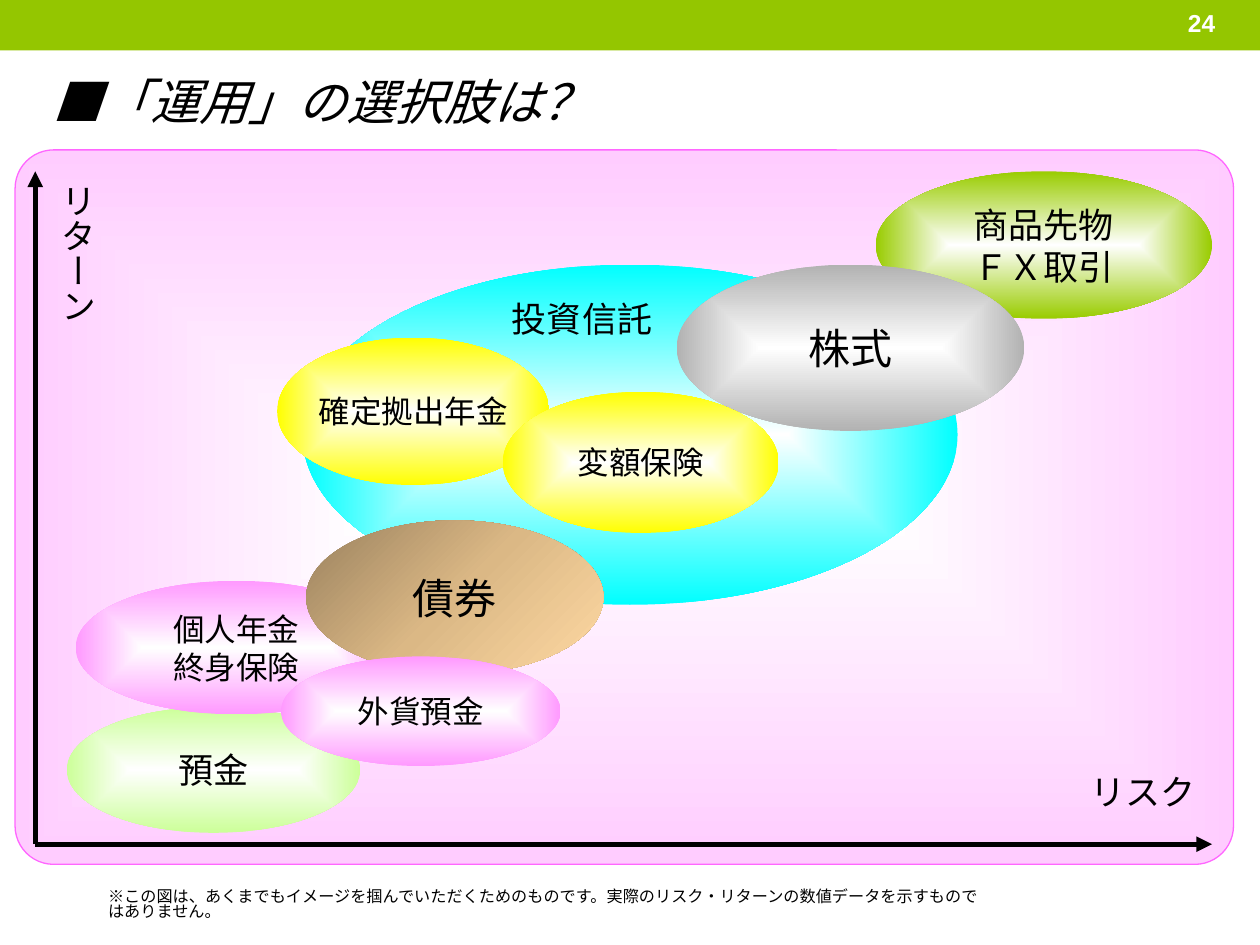
from lxml import etree
from pptx import Presentation
from pptx import util as u
from pptx.dml.color import RGBColor
from pptx.enum import shapes, text
from pptx.oxml.ns import qn

WIDE, HIGH = 10, 7.5
SANS, CJK = "Arial", "Noto Sans CJK JP"
BLACK = RGBColor(0, 0, 0)
WHITE = RGBColor(0xFF, 0xFF, 0xFF)
GREEN = RGBColor(0x94, 0xC6, 0x00)
PANEL = RGBColor(0xFF, 0xCC, 0xFF)
EDGE = RGBColor(0xFF, 0x66, 0xFF)
MINT = RGBColor(0xCC, 0xFF, 0x99)
LIME = RGBColor(0x99, 0xCC, 0x00)
CYAN = RGBColor(0x00, 0xFF, 0xFF)
GREY = RGBColor(0xB2, 0xB2, 0xB2)
YELLOW = RGBColor(0xFF, 0xFF, 0x00)
PINK = RGBColor(0xFF, 0x99, 0xFF)
TAN = (RGBColor(0x9A, 0x81, 0x5E), RGBColor(0xDB, 0xB8, 0x85),
       RGBColor(0xFF, 0xD9, 0xA3))

# Axis corner and ends, shared by both arrows
LEFT, BASE, TOP, RIGHT = 0.28, 6.7, 1.36, 9.62

# Investment kinds from back to front: box, colour, lines, text size
KINDS = [
    ((0.53, 5.61, 2.33, 1.0), MINT, ["預金"], 20),
    ((6.95, 1.36, 2.67, 1.17), LIME, ["商品先物", "ＦＸ取引"], 20),
    ((2.4, 2.1, 5.2, 2.7), CYAN, [], 20),
    ((5.37, 2.1, 2.76, 1.32), GREY, ["株式"], 24),
    ((2.2, 2.68, 2.16, 1.17), YELLOW, ["確定拠出年金"], 18),
    ((0.6, 4.61, 2.55, 1.06), PINK, ["個人年金", "終身保険"], 18),
    ((3.99, 3.11, 2.19, 1.12), YELLOW, ["変額保険"], 18),
    ((2.43, 4.13, 2.36, 1.22), TAN, ["債券"], 24),
    ((2.23, 5.21, 2.22, 0.87), PINK, ["外貨預金"], 18),
]


def place(box):
    return [u.Inches(n) for n in box]


def write(frame, lines, size, font=CJK, color=BLACK, bold=False,
          slant=False, align=text.PP_ALIGN.LEFT,
          anchor=text.MSO_ANCHOR.MIDDLE, wrap=False, pitch=None):
    frame.word_wrap = wrap
    frame.vertical_anchor = anchor
    for i, line in enumerate(lines):
        para = frame.add_paragraph() if i else frame.paragraphs[0]
        para.alignment = align
        if pitch:
            para.line_spacing = pitch
        run = para.add_run()
        run.text = line
        face = run.font
        face.name, face.size = font, u.Pt(size)
        face.bold, face.italic = bold, slant
        face.color.rgb = color
        east = etree.SubElement(run._r.get_or_add_rPr(), qn("a:ea"))
        east.set("typeface", CJK)


def label(slide, box, lines, size, **style):
    frame = slide.shapes.add_textbox(*place(box)).text_frame
    write(frame, lines, size, **style)
    return frame


def blend(shape, colors, glow):
    """Fill with evenly spaced colours, from the centre out if glow is set."""
    shape.fill.gradient()
    grad = shape._element.spPr.find(qn("a:gradFill"))
    grad.clear()
    stops = etree.SubElement(grad, qn("a:gsLst"))
    for i, color in enumerate(colors):
        stop = etree.SubElement(stops, qn("a:gs"))
        stop.set("pos", str(100000 * i // (len(colors) - 1)))
        etree.SubElement(stop, qn("a:srgbClr")).set("val", str(color))
    if glow:
        way = etree.SubElement(grad, qn("a:path"))
        way.set("path", "shape")
        rect = etree.SubElement(way, qn("a:fillToRect"))
        for side in "ltrb":
            rect.set(side, "50000")
    else:
        etree.SubElement(grad, qn("a:lin")).set("ang", str(45 * 60000))


def form(slide, kind, box):
    shape = slide.shapes.add_shape(kind, *place(box))
    shape.shadow.inherit = False
    shape.line.fill.background()
    return shape


def oval(slide, box, color, lines, size):
    shape = form(slide, shapes.MSO_SHAPE.OVAL, box)
    if color is TAN:
        blend(shape, TAN, False)
    else:
        blend(shape, (WHITE, color), True)
    write(shape.text_frame, lines, size, align=text.PP_ALIGN.CENTER)


def arrow(slide, end):
    line = slide.shapes.add_connector(
        shapes.MSO_CONNECTOR.STRAIGHT, *place((LEFT, BASE, *end)))
    line.line.color.rgb = BLACK
    line.line.width = u.Pt(3)
    tip = etree.SubElement(line.line._get_or_add_ln(), qn("a:tailEnd"))
    tip.set("type", "triangle")
    etree.SubElement(line._element.spPr, qn("a:effectLst"))


def head(slide):
    bar = form(slide, shapes.MSO_SHAPE.RECTANGLE, (0, 0, WIDE, 0.4))
    bar.fill.solid()
    bar.fill.fore_color.rgb = GREEN
    label(slide, (9.33, 0, 0.67, 0.36), ["24"], 14, font=SANS,
          color=WHITE, bold=True, wrap=True)
    title = slide.shapes.title
    title.left, title.top, title.width, title.height = place(
        (0.32, 0.52, 4.72, 0.63))
    write(title.text_frame, ["■「運用」の選択肢は？"], 28, font=SANS,
          slant=True, anchor=text.MSO_ANCHOR.TOP, wrap=True)


def chart(slide):
    panel = form(slide, shapes.MSO_SHAPE.ROUNDED_RECTANGLE,
                 (0.12, 1.19, 9.67, 5.67))
    panel.adjustments[0] = 0.054
    blend(panel, (WHITE, PANEL), True)
    panel.line.color.rgb = EDGE
    panel.line.width = u.Pt(0.75)
    arrow(slide, (LEFT, TOP))
    arrow(slide, (RIGHT, BASE))
    label(slide, (8.53, 6.03, 1.08, 0.5), ["リスク"], 20,
          align=text.PP_ALIGN.CENTER)
    gain = label(slide, (0.37, TOP, 0.5, 1.08), ["リターン"], 20)
    gain._txBody.bodyPr.set("vert", "eaVert")
    for kind in KINDS:
        oval(slide, *kind)
    label(slide, (3.87, 2.31, 1.5, 0.43), ["投資信託"], 20, wrap=True,
          align=text.PP_ALIGN.CENTER, anchor=text.MSO_ANCHOR.TOP)


def main():
    deck = Presentation()
    deck.slide_width, deck.slide_height = u.Inches(WIDE), u.Inches(HIGH)
    slide = deck.slides.add_slide(deck.slide_layouts[5])
    head(slide)
    chart(slide)
    label(slide, (0.76, 7.01, 7.2, 0.37),
          ["※この図は、あくまでもイメージを掴んでいただくためのものです。"
           "実際のリスク・リターンの数値データを示すものではありません。"],
          9.2, font=SANS, anchor=text.MSO_ANCHOR.TOP, wrap=True, pitch=0.82)
    deck.save("out.pptx")


if __name__ == "__main__":
    main()
